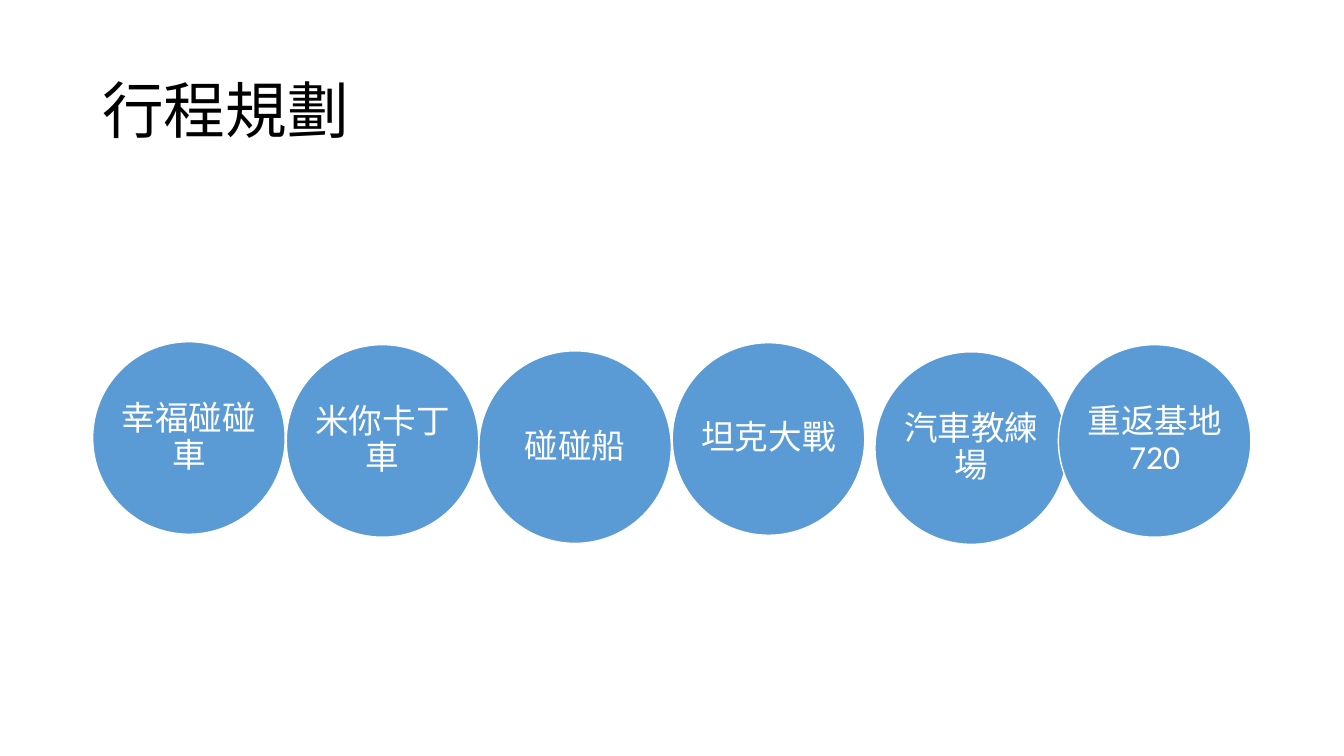
from pptx import Presentation
from pptx import util as u
from pptx.dml.color import RGBColor
from pptx.enum import shapes, text

COLOURS = {"title": "000000", "circle": "5B9BD5", "light": "FFFFFF"}
DIAMETER = 137.5
STOPS = [
    ("坦克大戰", 480.2, 244.8),
    ("米你卡丁車", 204.5, 246.2),
    ("碰碰船", 342, 250.6),
    ("幸福碰碰車", 66.2, 244.1),
    ("汽車教練場", 625, 251.3),
    ("重返基地720", 756, 246.2),
]


class SlideBuilder:
    font = "Calibri"

    def __init__(self, slide):
        self.slide = slide

    def colour(self, name):
        return RGBColor.from_string(COLOURS[name])

    def set_label(self, shape, words, size, colour, align):
        frame = shape.text_frame
        frame.word_wrap = True
        frame.vertical_anchor = text.MSO_ANCHOR.MIDDLE
        frame.text = words
        paragraph = frame.paragraphs[0]
        paragraph.alignment = align
        paragraph.line_spacing = 0.9
        for run in paragraph.runs:
            run.font.name = self.font
            run.font.size = u.Pt(size)
            run.font.color.rgb = self.colour(colour)

    def title(self, words, left, top, width, height):
        box = self.slide.shapes.add_textbox(
            u.Pt(left), u.Pt(top), u.Pt(width), u.Pt(height))
        self.set_label(box, words, 44, "title", text.PP_ALIGN.LEFT)

    def circle(self, words, left, top):
        shape = self.slide.shapes.add_shape(
            shapes.MSO_SHAPE.OVAL, u.Pt(left), u.Pt(top),
            u.Pt(DIAMETER), u.Pt(DIAMETER))
        shape.shadow.inherit = False
        shape.fill.solid()
        shape.fill.fore_color.rgb = self.colour("circle")
        shape.line.color.rgb = self.colour("light")
        shape.line.width = u.Pt(1)
        frame = shape.text_frame
        frame.margin_left = frame.margin_right = 0
        frame.margin_top = frame.margin_bottom = 0
        self.set_label(shape, words, 24, "light", text.PP_ALIGN.CENTER)


def main():
    presentation = Presentation()
    presentation.slide_width = u.Pt(960)
    presentation.slide_height = u.Pt(540)
    builder = SlideBuilder(
        presentation.slides.add_slide(presentation.slide_layouts[6]))
    builder.title("行程規劃", 66, 28.75, 828, 104.4)
    for words, left, top in STOPS:
        builder.circle(words, left, top)
    presentation.save("out.pptx")


if __name__ == "__main__":
    main()
